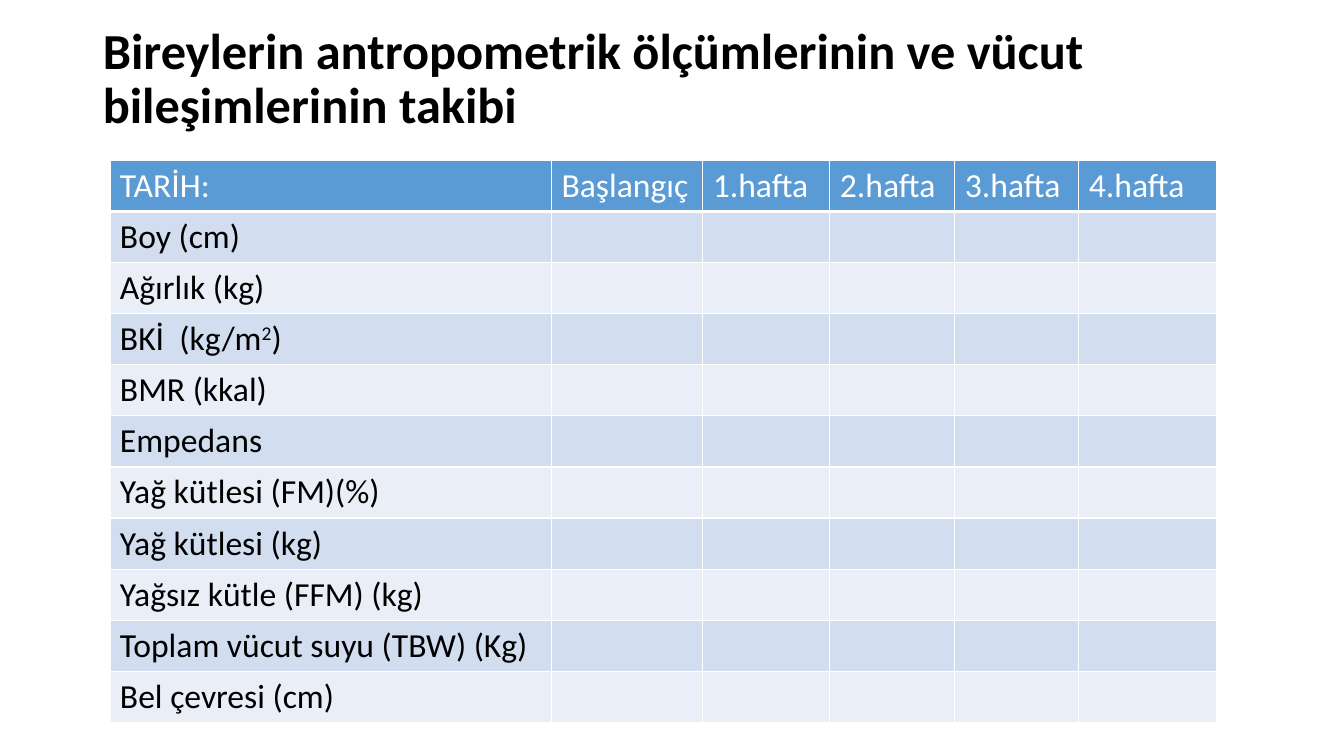
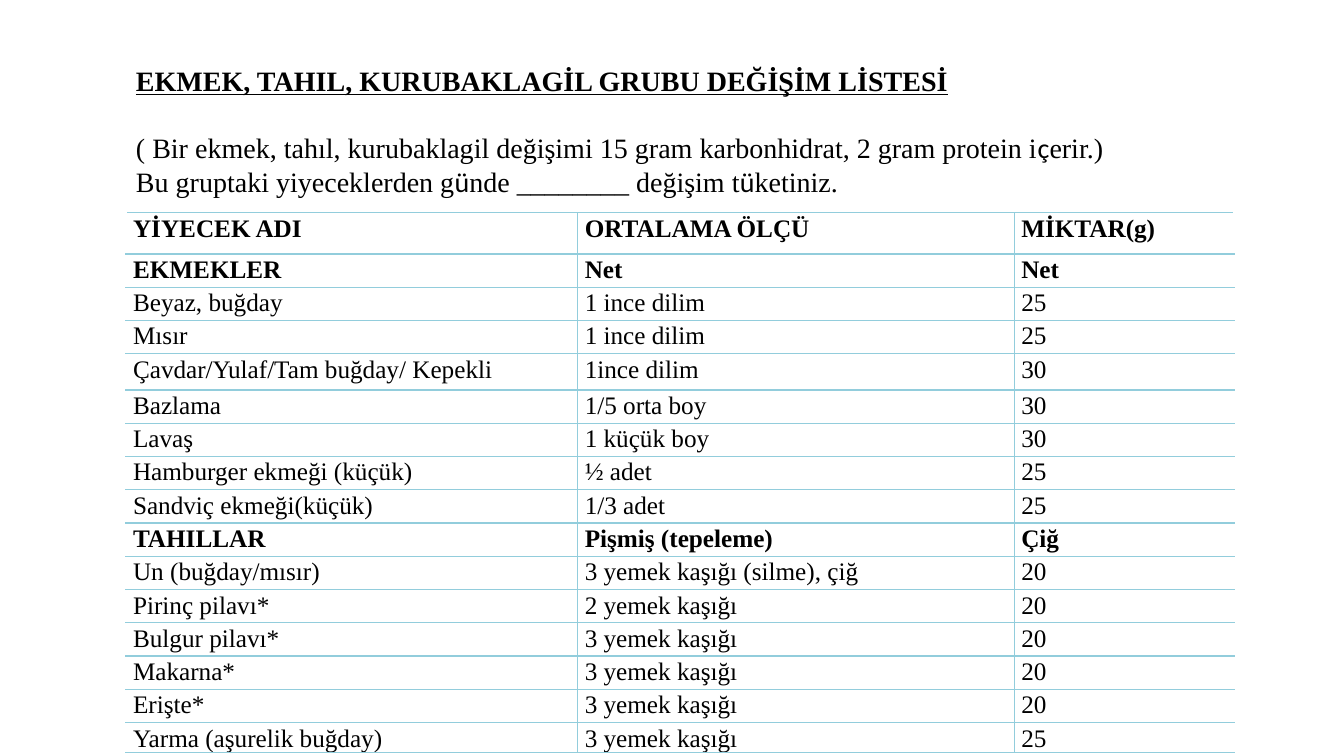
from lxml import etree
from pptx import Presentation
from pptx.dml.color import RGBColor
from pptx.enum.text import MSO_ANCHOR as Anchor, PP_ALIGN as Align
from pptx.oxml.ns import qn
from pptx.util import Inches, Pt

BLACK = RGBColor(0x00, 0x00, 0x00)
WHITE = RGBColor(0xFF, 0xFF, 0xFF)
HEADER_BLUE = RGBColor(0x5B, 0x9B, 0xD5)
BANDS = (RGBColor(0xD2, 0xDE, 0xEF), RGBColor(0xEA, 0xEF, 0xF7))
RULE_TEAL = RGBColor(0x92, 0xCD, 0xDC)

SANS, SERIF = "Calibri", "Times New Roman"
TITLE_ONLY, BLANK = 5, 6
SUPERSCRIPT = "30000"


class Handout:
    """Holds the deck, the shared styles and the current slide."""

    title_format = {"name": SANS, "size": Pt(36), "bold": True}
    tracking_format = {"name": SANS, "size": Pt(24), "bold": False}
    intro_format = {"name": SERIF, "size": Pt(20), "bold": False}
    list_format = {"name": SERIF, "size": Pt(18), "bold": False}

    def __init__(self):
        self.deck = Presentation()
        self.deck.slide_width = Inches(13.33)
        self.deck.slide_height = Inches(7.5)
        self.slide = None

    def new_slide(self, layout):
        self.slide = self.deck.slides.add_slide(self.deck.slide_layouts[layout])

    def place(self, shape, left, top, width, height):
        shape.left, shape.top = Inches(left), Inches(top)
        shape.width, shape.height = Inches(width), Inches(height)

    def add_span(self, para, text, formats, color=BLACK):
        span = para.add_run()
        span.text = text
        for name, value in formats.items():
            setattr(span.font, name, value)
        span.font.color.rgb = color
        return span

    def title(self, text, *position):
        box = self.slide.shapes.title
        self.place(box, *position)
        frame = box.text_frame
        frame.word_wrap = True
        frame.vertical_anchor = Anchor.MIDDLE
        para = frame.paragraphs[0]
        para.alignment = Align.LEFT
        para.line_spacing = 0.9
        self.add_span(para, text, self.title_format)

    def text_box(self, lines, *position):
        """Each line is a list of (text, format changes), then its space after."""
        box = self.slide.shapes.add_textbox(*map(Inches, position))
        frame = box.text_frame
        frame.word_wrap = True
        for index, (spans, gap) in enumerate(lines):
            para = frame.add_paragraph() if index else frame.paragraphs[0]
            para.space_after = Pt(gap)
            for text, changes in spans:
                self.add_span(para, text, {**self.intro_format, **changes})

    def table(self, left, top, widths, heights):
        frame = self.slide.shapes.add_table(
            len(heights), len(widths), Inches(left), Inches(top),
            Inches(sum(widths)), Inches(sum(heights)))
        table = frame.table
        table.first_row = table.horz_banding = False
        for column, width in zip(table.columns, widths):
            column.width = Inches(width)
        for row, height in zip(table.rows, heights):
            row.height = Inches(height)
        return table

    def borders(self, cell, color, widths):
        """Draw the sides named in widths (L, R, T, B), in points."""
        properties = cell._tc.get_or_add_tcPr()
        for side in "LRTB":
            if side in widths:
                line = etree.SubElement(properties, qn(f"a:ln{side}"),
                                        w=str(Pt(widths[side])))
                fill = etree.SubElement(line, qn("a:solidFill"))
                etree.SubElement(fill, qn("a:srgbClr"), val=str(color))

    def tracking_table(self, headings, measures, left, top, widths, row_height):
        heights = [row_height] * (len(measures) + 1)
        table = self.table(left, top, widths, heights)
        for r, row in enumerate(table.rows):
            for cell in row.cells:
                self.borders(cell, WHITE, dict(L=1, R=1, T=1, B=1 if r else 3))
                cell.fill.solid()
                cell.fill.fore_color.rgb = BANDS[(r - 1) % 2] if r else HEADER_BLUE
        for column, heading in enumerate(headings):
            para = table.cell(0, column).text_frame.paragraphs[0]
            self.add_span(para, heading, self.tracking_format, WHITE)
        for r, measure in enumerate(measures, 1):
            para = table.cell(r, 0).text_frame.paragraphs[0]
            # A caret pair encloses superscript text
            for index, text in enumerate(measure.split("^")):
                span = self.add_span(para, text, self.tracking_format)
                if index % 2:
                    span._r.get_or_add_rPr().set("baseline", SUPERSCRIPT)

    def exchange_table(self, rows, bold_rows, left, top, widths, heights):
        table = self.table(left, top, widths, heights)
        column_sides = ("RTB", "LRTB", "LTB")
        for r, values in enumerate(rows):
            formats = {**self.list_format, "bold": r in bold_rows}
            for c, value in enumerate(values):
                cell = table.cell(r, c)
                self.borders(cell, RULE_TEAL, dict.fromkeys(column_sides[c], 1))
                cell.fill.background()
                cell.margin_left = cell.margin_right = Inches(0.07)
                cell.margin_top = cell.margin_bottom = 0
                para = cell.text_frame.paragraphs[0]
                para.alignment = Align.JUSTIFY if r < 2 else Align.LEFT
                para.line_spacing = 1.07
                para.space_after = Pt(8)
                self.add_span(para, value, formats)


WEEKS = ["TARİH:", "Başlangıç"] + [f"{week}.hafta" for week in range(1, 5)]
MEASURES = [
    "Boy (cm)", "Ağırlık (kg)", "BKİ  (kg/m^2^)", "BMR (kkal)", "Empedans",
    "Yağ kütlesi (FM)(%)", "Yağ kütlesi (kg)", "Yağsız kütle (FFM) (kg)",
    "Toplam vücut suyu (TBW) (Kg)", "Bel çevresi (cm)",
]

HEADING = {"bold": True, "underline": True}
ACCENT = {"name": SANS}
INTRO = [
    ([("EKMEK, TAHIL, KURUBAKLAGİL GRUBU DEĞİŞİM LİSTESİ", HEADING)], 24),
    ([("( Bir ekmek, tahıl, kurubaklagil değişimi 15 gram karbonhidrat, "
       "2 gram protein i", {}), ("ç", ACCENT), ("erir.)", {})], 0),
    ([("Bu gruptaki yiyeceklerden g", {}), ("ü", ACCENT),
      ("nde ________ değişim t", {}), ("ü", ACCENT), ("ketiniz.", {})], 0),
]
FOODS = [
    ("YİYECEK ADI", "ORTALAMA ÖLÇÜ", "MİKTAR(g)"),
    ("EKMEKLER", "Net", "Net"),
    ("Beyaz, buğday", "1 ince dilim", "25"),
    ("Mısır", "1 ince dilim", "25"),
    ("Çavdar/Yulaf/Tam buğday/ Kepekli", "1ince dilim", "30"),
    ("Bazlama", "1/5 orta boy", "30"),
    ("Lavaş", "1 küçük boy", "30"),
    ("Hamburger ekmeği (küçük)", "½ adet", "25"),
    ("Sandviç ekmeği(küçük)", "1/3 adet", "25"),
    ("TAHILLAR", "Pişmiş (tepeleme)", "Çiğ"),
    ("Un (buğday/mısır)", "3 yemek kaşığı (silme), çiğ", "20"),
    ("Pirinç pilavı*", "2 yemek kaşığı", "20"),
    ("Bulgur pilavı*", "3 yemek kaşığı", "20"),
    ("Makarna*", "3 yemek kaşığı", "20"),
    ("Erişte*", "3 yemek kaşığı", "20"),
    ("Yarma (aşurelik buğday)", "3 yemek kaşığı", "25"),
]
BOLD_ROWS = (0, 1, 9)
FOOD_HEIGHTS = [0.41] + [0.33] * 3 + [0.36] + [0.33] * 10 + [0.28]


def main():
    handout = Handout()

    # Weekly body measurements
    handout.new_slide(TITLE_ONLY)
    handout.title("Bireylerin antropometrik ölçümlerinin ve vücut "
                  "bileşimlerinin takibi", 0.92, 0.07, 11.5, 1.45)
    handout.tracking_table(WEEKS, MEASURES, 1.09, 1.59,
                           [4.38, 1.5, 1.26, 1.24, 1.23, 1.37], 0.5)

    # Bread and grain exchange list
    handout.new_slide(BLANK)
    handout.exchange_table(FOODS, BOLD_ROWS, 1.25, 2.11,
                           [4.48, 4.33, 2.18], FOOD_HEIGHTS)
    handout.text_box(INTRO, 1.25, 0.58, 11.14, 1.75)

    handout.deck.save("out.pptx")


if __name__ == "__main__":
    main()
